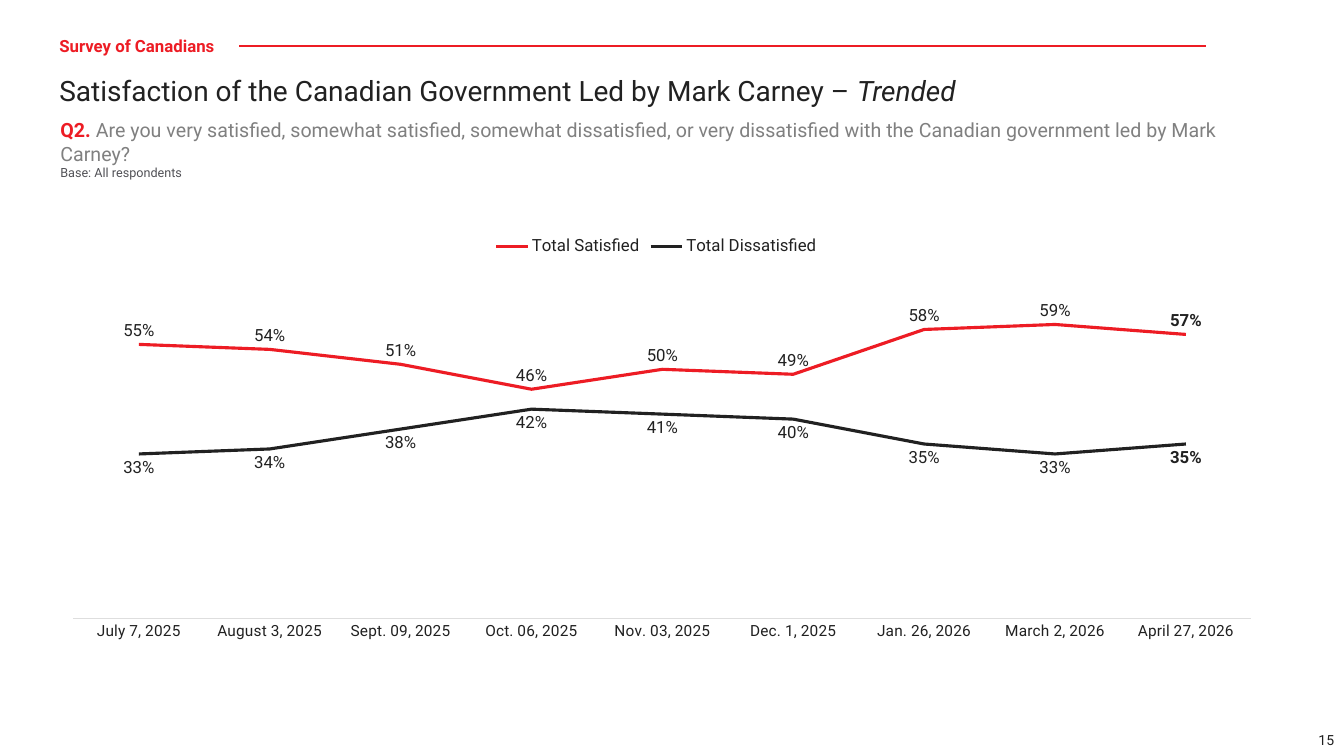
from lxml import etree
from pptx import Presentation
from pptx.chart.data import CategoryChartData
from pptx.dml.color import RGBColor
from pptx.enum import chart as charts, shapes, text
from pptx.oxml import ns, xmlchemy
from pptx.util import Inches, Pt

RED = RGBColor(0xED, 0x1C, 0x24)
INK = RGBColor(0x21, 0x21, 0x21)
GREY = RGBColor(0x80, 0x80, 0x80)
DARK_GREY = RGBColor(0x51, 0x51, 0x56)
AXIS_GREY = RGBColor(0xDE, 0xDE, 0xDE)
FONT = "Roboto"

WAVES = ["July 7, 2025", "August 3, 2025", "Sept. 09, 2025", "Oct. 06, 2025",
         "Nov. 03, 2025", "Dec. 1, 2025", "Jan. 26, 2026", "March 2, 2026",
         "April 27, 2026"]
ABOVE = charts.XL_LABEL_POSITION.ABOVE
BELOW = charts.XL_LABEL_POSITION.BELOW
# Name, values, line colour, label position
TRENDS = [
    ("Total Satisfied", [.55, .54, .51, .46, .50, .49, .58, .59, .57], RED, ABOVE),
    ("Total Dissatisfied", [.33, .34, .38, .42, .41, .40, .35, .33, .35], INK, BELOW),
]
PLOT_LAYOUT = {"x": 0.019, "y": 0.105, "w": 0.972, "h": 0.814}


def style_font(font, size, color=INK, bold=False, italic=False):
    font.name = FONT
    font.size = Pt(size)
    font.color.rgb = color
    font.bold = bold
    font.italic = italic


def add_text(page, left, top, width, height, paragraphs,
             align=text.PP_ALIGN.LEFT, anchor=text.MSO_ANCHOR.TOP, spacing=1.0):
    """Each paragraph is a list of (wording, size, color, bold, italic) spans."""
    box = page.shapes.add_textbox(Inches(left), Inches(top), Inches(width), Inches(height))
    frame = box.text_frame
    frame.word_wrap = True
    frame.vertical_anchor = anchor
    for index, spans in enumerate(paragraphs):
        para = frame.paragraphs[0] if index == 0 else frame.add_paragraph()
        para.alignment = align
        para.line_spacing = spacing
        for wording, *style in spans:
            span = para.add_run()
            span.text = wording
            style_font(span.font, *style)
    return box


def add_header(page, left, top, width):
    # Rule with the section name on a white patch over its left end
    rule_y = Inches(top + 0.13)
    rule = page.shapes.add_connector(shapes.MSO_CONNECTOR.STRAIGHT, Inches(left + 0.41),
                                     rule_y, Inches(left + width), rule_y)
    rule.line.color.rgb = RED
    rule.line.width = Pt(1.5)
    etree.SubElement(rule._element.spPr, ns.qn("a:effectLst"))
    section = add_text(page, left, top, 1.88, 0.28,
                       [[("Survey of Canadians", 12, RED, True)]],
                       anchor=text.MSO_ANCHOR.MIDDLE, spacing=0.9)
    section.fill.solid()
    section.fill.fore_color.rgb = RGBColor(0xFF, 0xFF, 0xFF)

    # Headline
    add_text(page, left, top + 0.39, width, 0.39, [[
        ("Satisfaction of the Canadian Government Led by Mark Carney – ", 20),
        ("Trended", 20, INK, False, True)]], spacing=0.9)


def add_question(page, left, top, width):
    add_text(page, left, top, width, 0.49, [
        [("Q2. ", 14, RED, True),
         ("Are you very satisfied, somewhat satisfied, somewhat dissatisfied, or very "
          "dissatisfied with the Canadian government led by Mark Carney?", 14, GREY)],
        [("Base: All respondents", 9, DARK_GREY)]])


def set_plot_layout(chart):
    """Fix the inner plot area as fractions of the chart."""
    plot_area = chart._chartSpace.chart.plotArea
    for old in plot_area.findall(ns.qn("c:layout")):
        plot_area.remove(old)
    layout = xmlchemy.OxmlElement("c:layout")
    manual = etree.SubElement(layout, ns.qn("c:manualLayout"))
    settings = {"layoutTarget": "inner", "xMode": "edge", "yMode": "edge", **PLOT_LAYOUT}
    for tag, value in settings.items():
        etree.SubElement(manual, ns.qn(f"c:{tag}")).set("val", str(value))
    plot_area.insert(0, layout)


def add_trend_chart(page, left, top, width, height):
    data = CategoryChartData(number_format="0%")
    data.categories = WAVES
    for name, values, _, _ in TRENDS:
        data.add_series(name, values)
    chart = page.shapes.add_chart(charts.XL_CHART_TYPE.LINE, Inches(left), Inches(top),
                                  Inches(width), Inches(height), data).chart
    chart.has_title = False
    style_font(chart.font, 10)
    set_plot_layout(chart)

    # Legend
    chart.has_legend = True
    chart.legend.position = charts.XL_LEGEND_POSITION.TOP
    chart.legend.include_in_layout = False
    style_font(chart.legend.font, 12)

    # Axes
    waves = chart.category_axis
    waves.major_tick_mark = charts.XL_TICK_MARK.NONE
    waves.format.line.color.rgb = AXIS_GREY
    waves.format.line.width = Pt(0.75)
    style_font(waves.tick_labels.font, 11)
    shares = chart.value_axis
    shares.visible = False
    shares.has_major_gridlines = False
    shares.minimum_scale = 0
    shares.maximum_scale = 0.7

    # Lines and labels, with the latest wave in bold
    chart.plots[0].vary_by_categories = False
    for series, (_, _, color, position) in zip(chart.plots[0].series, TRENDS):
        series.smooth = False
        series.marker.style = charts.XL_MARKER_STYLE.NONE
        series.format.line.color.rgb = color
        series.format.line.width = Pt(2.25)
        labels = series.data_labels
        labels.show_value = True
        labels.number_format = "0%"
        labels.number_format_is_linked = False
        labels.position = position
        style_font(labels.font, 12)
        latest = series.points[len(WAVES) - 1].data_label
        style_font(latest.font, 12, bold=True)
        latest.position = position


def add_page_number(page, left, top):
    add_text(page, left, top, 1.24, 0.32, [[("15", 10)]],
             align=text.PP_ALIGN.RIGHT, anchor=text.MSO_ANCHOR.MIDDLE)


def main():
    deck = Presentation()
    deck.slide_width = Inches(13.33)
    deck.slide_height = Inches(7.5)
    page = deck.slides.add_slide(deck.slide_layouts[6])
    add_header(page, 0.49, 0.33, 11.47)
    add_question(page, 0.5, 1.12, 12.25)
    add_trend_chart(page, 0.5, 2.23, 12.02, 4.25)
    add_page_number(page, 12.09, 7.18)
    deck.save("out.pptx")


if __name__ == "__main__":
    main()
